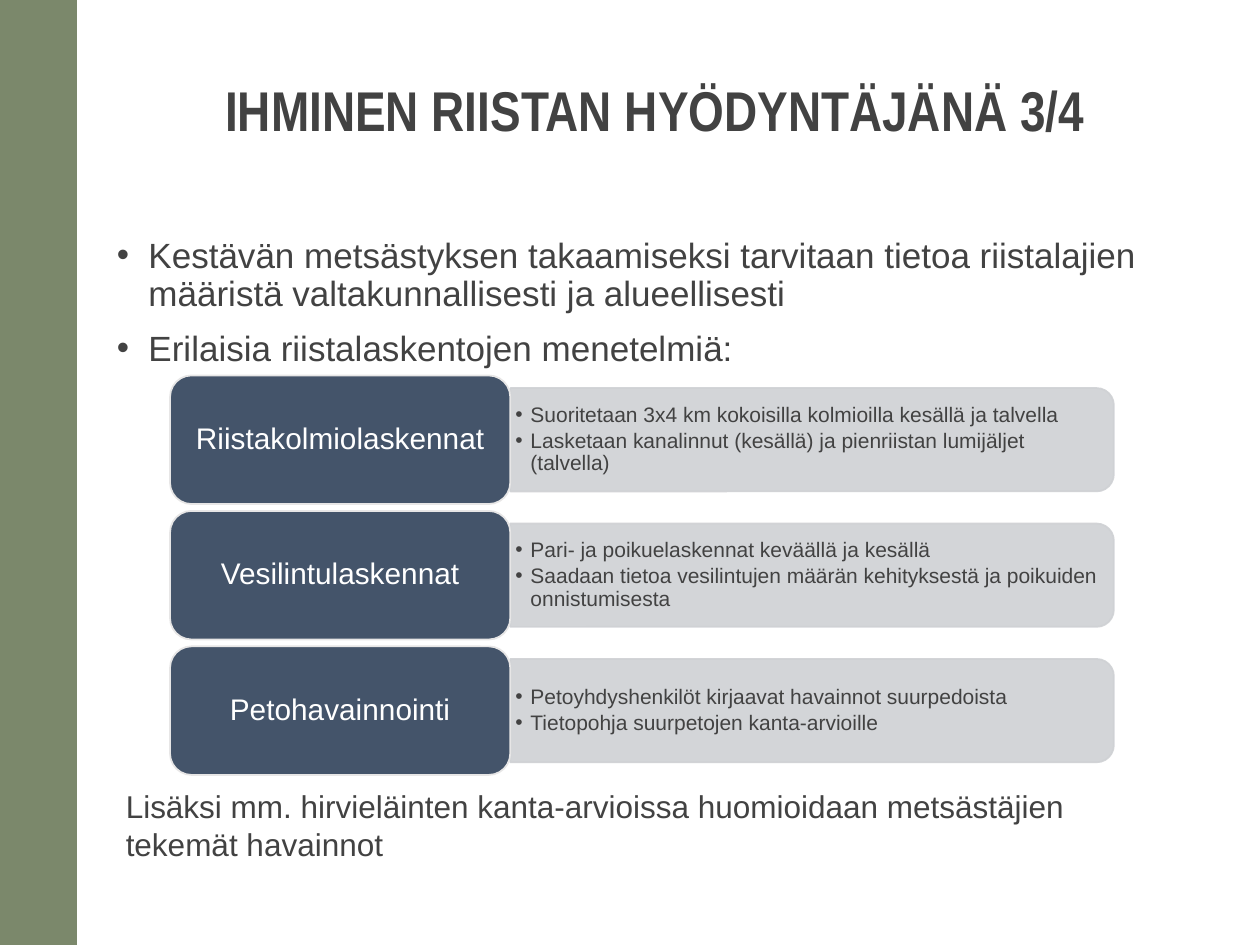
from dataclasses import dataclass

from lxml.etree import SubElement
from pptx import Presentation
from pptx.dml.color import RGBColor
from pptx.enum.shapes import MSO_SHAPE as Shape
from pptx.enum.text import MSO_ANCHOR as Anchor, PP_ALIGN as Align
from pptx.oxml.ns import qn
from pptx.util import Inches, Pt

COLORS = {
    "band": "7B886B",
    "text": "424242",
    "panel": "CFD1D4",
    "label": "44546A",
    "label_edge": "E7E6E6",
    "label_text": "FFFFFF",
}
COLUMNS, ROWS = 100, 75
CELL = Inches(10) // COLUMNS

TITLE = "IHMINEN RIISTAN HYÖDYNTÄJÄNÄ 3/4"
POINTS = [
    "Kestävän metsästyksen takaamiseksi tarvitaan tietoa riistalajien "
    "määristä valtakunnallisesti ja alueellisesti",
    "Erilaisia riistalaskentojen menetelmiä:",
]
METHODS = [
    ("Riistakolmiolaskennat", [
        "Suoritetaan 3x4 km kokoisilla kolmioilla kesällä ja talvella",
        "Lasketaan kanalinnut (kesällä) ja pienriistan lumijäljet (talvella)",
    ]),
    ("Vesilintulaskennat", [
        "Pari- ja poikuelaskennat keväällä ja kesällä",
        "Saadaan tietoa vesilintujen määrän kehityksestä ja poikuiden onnistumisesta",
    ]),
    ("Petohavainnointi", [
        "Petoyhdyshenkilöt kirjaavat havainnot suurpedoista",
        "Tietopohja suurpetojen kanta-arvioille",
    ]),
]
CLOSING = ("Lisäksi mm. hirvieläinten kanta-arvioissa huomioidaan "
           "metsästäjien tekemät havainnot")


@dataclass
class Box:
    """An area measured in grid columns and rows."""
    left: float
    top: float
    width: float
    height: float

    def inner(self, left, top, width, height):
        return Box(self.left + left, self.top + top, width, height)

    def turned(self):
        """The unrotated frame that covers this box after a quarter turn."""
        shift = (self.width - self.height) / 2
        return Box(self.left + shift, self.top - shift, self.height, self.width)

    def lengths(self):
        return [round(n * CELL) for n in (self.left, self.top, self.width, self.height)]


def color(name):
    return RGBColor.from_string(COLORS[name])


def add_block(page, kind, box, fill, line=None, opacity=None):
    block = page.shapes.add_shape(kind, *box.lengths())
    block.shadow.inherit = False
    block.fill.solid()
    block.fill.fore_color.rgb = color(fill)
    if line:
        block.line.color.rgb = color(line)
        block.line.width = Pt(1)
    else:
        block.line.fill.background()
    if opacity:
        for tone in block.element.spPr.iter(qn("a:srgbClr")):
            SubElement(tone, qn("a:alpha"), val=str(opacity * 1000))
    return block


def write(shape, texts, size, font="Arial", tone="text", bold=False, align=Align.LEFT,
          anchor=Anchor.TOP, inset=(0.1, 0.05), spacing=0.9, before=0, after=0, indent=0):
    """Fill a shape with paragraphs; an indent in inches makes them bulleted."""
    frame = shape.text_frame
    frame.word_wrap = True
    frame.vertical_anchor = anchor
    frame.margin_left = frame.margin_right = Inches(inset[0])
    frame.margin_top = frame.margin_bottom = Inches(inset[1])
    for index, text in enumerate(texts):
        para = frame.add_paragraph() if index else frame.paragraphs[0]
        if indent:
            props = para._p.get_or_add_pPr()
            props.set("marL", str(Inches(indent)))
            props.set("indent", str(-Inches(indent)))
            SubElement(props, qn("a:buFont"), typeface="Arial")
            SubElement(props, qn("a:buChar"), char="•")
        para.alignment = align
        para.line_spacing = spacing
        para.space_before = Pt(before if index else 0)
        para.space_after = Pt(after)
        span = para.add_run()
        span.text = text
        span.font.name = font
        span.font.size = Pt(size)
        span.font.bold = bold
        span.font.color.rgb = color(tone)


def add_text(page, box, texts, size, **style):
    write(page.shapes.add_textbox(*box.lengths()), texts, size, **style)


def add_heading(page, box):
    add_text(page, box.inner(0, 0, box.width, 10), [TITLE], 32, font="Arial Narrow",
             bold=True, align=Align.CENTER, anchor=Anchor.MIDDLE)
    add_text(page, box.inner(0, 14.4, box.width, 11), POINTS, 20, before=10, indent=0.25)


def add_method(page, box, name, details):
    """Draw a label with a panel of details to its right."""
    label_width, panel_height = 27, 8.2
    panel = box.inner(label_width, (box.height - panel_height) / 2,
                      box.width - label_width, panel_height)
    back = add_block(page, Shape.ROUND_2_SAME_RECTANGLE, panel.turned(),
                     "panel", "panel", opacity=90)
    back.rotation = 90
    add_text(page, panel.inner(-0.1, 0.4, panel.width - 0.4, panel.height - 0.8), details, 12,
             anchor=Anchor.MIDDLE, inset=(0.05, 0.03), after=1.8, indent=0.12)
    label = add_block(page, Shape.ROUNDED_RECTANGLE, box.inner(0, 0, label_width, box.height),
                      "label", "label_edge")
    write(label, [name], 17, tone="label_text", align=Align.CENTER,
          anchor=Anchor.MIDDLE, inset=(0.12, 0.09), after=6)


def add_methods(page, box):
    row_height = 10.2
    pitch = (box.height - row_height) / (len(METHODS) - 1)
    for index, (name, details) in enumerate(METHODS):
        add_method(page, box.inner(0, index * pitch, box.width, row_height), name, details)


def main():
    deck = Presentation()
    deck.slide_width, deck.slide_height = COLUMNS * CELL, ROWS * CELL
    page = deck.slides.add_slide(deck.slide_layouts[6])
    add_block(page, Shape.RECTANGLE, Box(0, 0, 6.1, ROWS), "band")
    add_heading(page, Box(8.3, 4, 87.4, 25.4))
    add_methods(page, Box(13.5, 29.8, 74.9, 31.7))
    add_text(page, Box(9, 62, 82.7, 10.1), [CLOSING], 18, spacing=1)
    deck.save("out.pptx")


if __name__ == "__main__":
    main()
